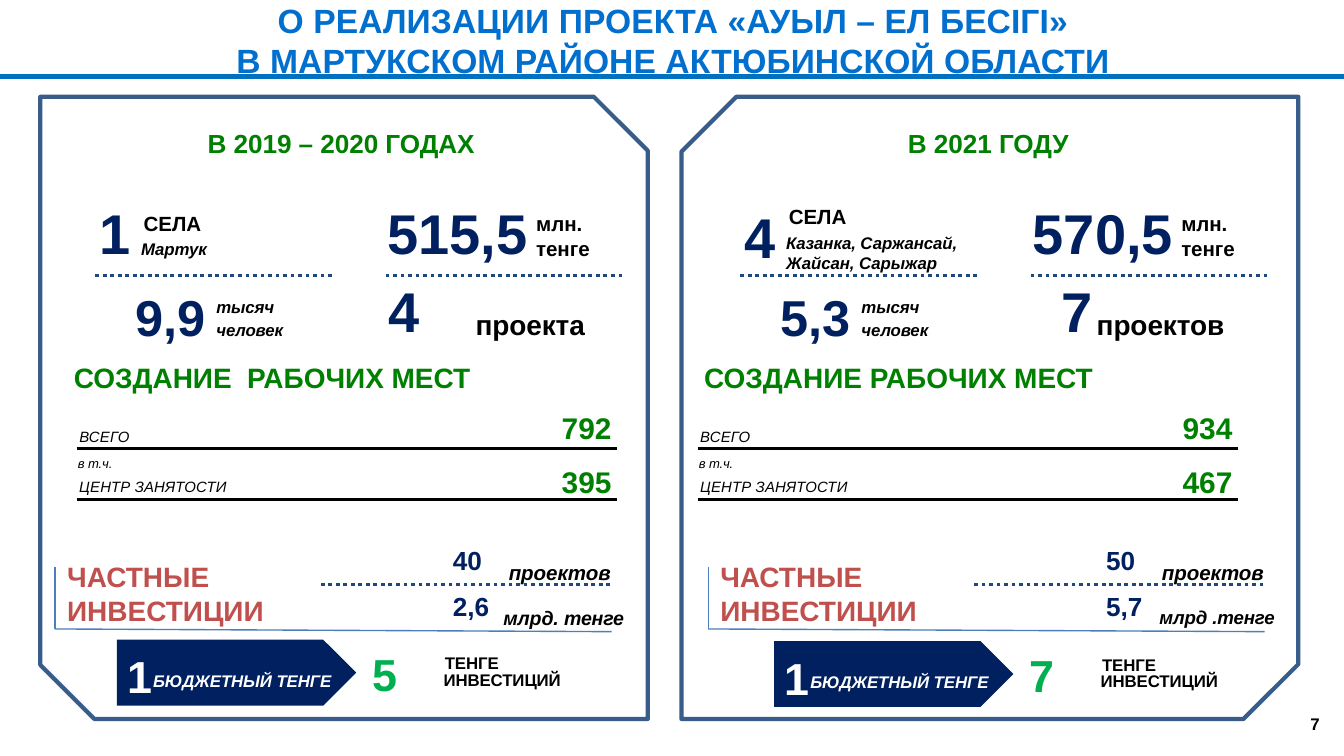
from lxml import etree
from pptx import Presentation
from pptx.dml.color import RGBColor
from pptx.enum import dml, shapes, text
from pptx.oxml.ns import qn
from pptx.util import Inches, Pt

NAVY, GREEN, BLACK, WHITE = "002060", "008000", "000000", "FFFFFF"
DOTS, EDGE, THIN, RED = "1F497D", "385D8A", "4B7EBC", "C0504D"
SHAPE = shapes.MSO_SHAPE


def color(code):
    return RGBColor.from_string(code)


def fill_text(frame, words, size=9, ink=BLACK, bold=True, italic=False,
              align="LEFT", wrap=True, pad=False, gap=-0.05, lead=None):
    """Write the lines of words into a text frame."""
    frame.word_wrap = wrap
    frame.auto_size = text.MSO_AUTO_SIZE.NONE
    frame.vertical_anchor = text.MSO_ANCHOR.TOP
    frame.margin_left = frame.margin_right = Inches(0.05 if pad else 0)
    frame.margin_top = Inches(0.02 if pad else 0.01)
    frame.margin_bottom = Inches(0.02 if pad else 0)
    for i, line in enumerate(words.split("\n")):
        para = frame.add_paragraph() if i else frame.paragraphs[0]
        para.alignment = getattr(text.PP_ALIGN, align)
        para._p.get_or_add_pPr().set("marL", str(Inches(0.01)))
        if lead:
            para.line_spacing = lead
        run = para.add_run()
        run.text = line
        font = run.font
        font.name, font.size = "Arial", Pt(size)
        font.bold, font.italic = bold, italic
        font.color.rgb = color(ink)
        run._r.get_or_add_rPr().set("spc", str(round(gap * 100)))


def label(slide, words, x, y, w, h, **style):
    box = slide.shapes.add_textbox(Inches(x), Inches(y), Inches(w), Inches(h))
    fill_text(box.text_frame, words, **style)


def tag(slide, words, x, y, w, h, **style):
    """A padded label that stays on its own lines."""
    label(slide, words, x, y, w, h, pad=True, wrap=False, **style)


def rule(slide, x1, y1, x2, y2, ink, width, dots=False):
    line = slide.shapes.add_connector(
        shapes.MSO_CONNECTOR.STRAIGHT,
        Inches(x1), Inches(y1), Inches(x2), Inches(y2))
    line.line.color.rgb = color(ink)
    line.line.width = Pt(width)
    if dots:
        line.line.dash_style = dml.MSO_LINE.ROUND_DOT
    etree.SubElement(line._element.spPr, qn("a:effectLst"))


def shape(slide, kind, x, y, w, h, fill=None, edge=None):
    item = slide.shapes.add_shape(
        kind, Inches(x), Inches(y), Inches(w), Inches(h))
    item.shadow.inherit = False
    if fill:
        item.fill.solid()
        item.fill.fore_color.rgb = color(fill)
    else:
        item.fill.background()
    if edge:
        item.line.color.rgb = color(edge)
        item.line.width = Pt(2.25)
    else:
        item.line.fill.background()
    return item


def frame(slide, x, y, w, h, turn=0):
    """Panel outline with two cut corners."""
    panel = shape(slide, SHAPE.SNIP_2_DIAG_RECTANGLE, x, y, w, h, edge=EDGE)
    panel.adjustments[0], panel.adjustments[1] = 0, 0.089
    panel.rotation = turn


def scope(slide, x, people, money):
    """Population and funding figures above and below dotted rules."""
    for left in (0.69, 2.85):
        rule(slide, x + left + 1.78, 2.05, x + left, 2.05, DOTS, 2, dots=True)
    label(slide, money, x + 2.74, 1.47, 1.32, 0.51,
          size=30, ink=NAVY, align="CENTER")
    label(slide, "млн. тенге", x + 3.98, 1.56, 0.66, 0.41, size=11)
    label(slide, people, x + 1, 2.12, 0.66, 0.46, size=27, ink=NAVY)
    label(slide, "тысяч человек", x + 1.55, 2.16, 0.8, 0.45,
          italic=True, pad=True, lead=Pt(12.6))


def villages(slide, x, y, count, names, w, h, top):
    label(slide, count, x, y, 0.37, 0.51, size=30, ink=NAVY)
    tag(slide, "СЕЛА", x + 0.28, top, 0.53, 0.25, size=11)
    tag(slide, names, x + 0.26, top + 0.21, w, h, italic=True)


def projects(slide, count, x, noun, left):
    label(slide, count, x, 2.05, 0.66, 0.51, size=30, ink=NAVY)
    label(slide, noun, left, 2.28, 1.32, 0.26, size=15, align="CENTER")


def jobs(slide, x, total, centre):
    """Two underlined rows of job counts."""
    small = dict(bold=False, italic=True)
    rows = (("ВСЕГО", total, 3.16, 3.04, 3.34, 0.49),
            ("ЦЕНТР ЗАНЯТОСТИ", centre, 3.53, 3.44, 3.72, 1.2))
    for name, count, top, high, base, w in rows:
        rule(slide, x, base, x + 4.02, base, BLACK, 1.65)
        tag(slide, name, x - 0.04, top, w, 0.18, size=8, gap=0.05, **small)
        label(slide, count, x + 3.6, high, 0.66, 0.28,
              size=16, ink=GREEN, gap=0)
    label(slide, "в т.ч.", x, 3.38, 0.48, 0.12, size=7,
          lead=Pt(8.2), **small)


def invest(slide, x, count, money, unit, size):
    """Private investment block."""
    rule(slide, x, 4.22, x, 4.68, THIN, 0.75)
    rule(slide, x, 4.68, x + 4.14, 4.7, THIN, 0.75)
    rule(slide, x + 4.13, 4.35, x + 1.97, 4.35, DOTS, 2, dots=True)
    label(slide, "ЧАСТНЫЕ\nИНВЕСТИЦИИ", x + 0.08, 4.15, 1.66, 0.52,
          size=15, ink=RED, gap=0, lead=1.01)
    for words, top in ((count, 4.04), (money, 4.38)):
        label(slide, words, x + 2.95, top, 0.51, 0.24,
              size=14, ink=NAVY, gap=0)
    label(slide, "проектов", x + 3.33, 4.16, 0.84, 0.19,
          size=11, italic=True, align="CENTER")
    label(slide, unit, x + 3.12, 4.5, 1.32, 0.18,
          size=size, italic=True, align="CENTER")


def budget(slide, x, y, yielded):
    """Arrow from one budget tenge to the investment it brings."""
    shape(slide, SHAPE.PENTAGON, x, y, 1.78, 0.49, fill=NAVY)
    label(slide, "1", x + 0.07, y + 0.06, 0.23, 0.41, size=24, ink=WHITE)
    label(slide, "БЮДЖЕТНЫЙ ТЕНГЕ", x + 0.26, y + 0.22, 1.36, 0.16,
          ink=WHITE, italic=True)
    label(slide, yielded, x + 1.89, y + 0.04, 0.66, 0.41,
          size=24, ink="00B050")
    label(slide, "ТЕНГЕ", x + 2.43, y + 0.09, 0.95, 0.16)
    tag(slide, "ИНВЕСТИЦИЙ", x + 2.37, y + 0.2, 1.02, 0.2)


def heads(slide, period, x, w, goal, left):
    label(slide, period, x, 0.94, w, 0.24,
          size=14, ink=GREEN, align="CENTER")
    label(slide, goal, left, 2.67, 3.36, 0.26,
          size=15, ink=GREEN, gap=0, lead=1.01)


def main():
    deck = Presentation()
    deck.slide_width, deck.slide_height = Inches(10), Inches(10) * 9 // 16
    slide = deck.slides.add_slide(deck.slide_layouts[5])

    # Title and its rule
    title = slide.shapes.title
    title.left, title.top = Inches(0.09), Inches(-0.02)
    title.width, title.height = Inches(9.83), Inches(0.65)
    fill_text(title.text_frame,
              "О РЕАЛИЗАЦИИ ПРОЕКТА «АУЫЛ – ЕЛ БЕСІГІ»\n"
              "В МАРТУКСКОМ РАЙОНЕ АКТЮБИНСКОЙ ОБЛАСТИ",
              size=18, ink="006FCE", align="CENTER", pad=True, gap=0.05)
    rule(slide, 0, 0.57, 10, 0.57, "0070C0", 2.25)

    # Left panel: 2019–2020
    frame(slide, 0.3, 0.72, 4.52, 4.63)
    heads(slide, "В 2019 – 2020 ГОДАХ ", 0.3, 4.52,
          "СОЗДАНИЕ  РАБОЧИХ МЕСТ", 0.54)
    scope(slide, 0, "9,9", "515,5")
    villages(slide, 0.73, 1.47, "1", "Мартук", 0.59, 0.2, 1.55)
    projects(slide, "4", 2.88, "проекта", 3.28)
    jobs(slide, 0.57, "792", "395")
    invest(slide, 0.41, "40", "2,6", "млрд. тенге", 10.5)
    budget(slide, 0.87, 4.76, "5")

    # Right panel: 2021
    frame(slide, 5.05, 0.74, 4.63, 4.59, turn=270)
    heads(slide, "В 2021 ГОДУ ", 5.08, 4.59,
          "СОЗДАНИЕ РАБОЧИХ МЕСТ", 5.23)
    scope(slide, 4.8, "5,3", "570,5")
    villages(slide, 5.53, 1.5, "4", "Казанка, Саржансай,\nЖайсан, Сарыжар",
             1.41, 0.35, 1.5)
    projects(slide, "7", 7.89, "проектов", 7.97)
    jobs(slide, 5.19, "934", "467")
    invest(slide, 5.27, "50", "5,7", "млрд .тенге", 10)
    budget(slide, 5.76, 4.77, "7")

    # Page number
    label(slide, "7", 9.74, 5.3, 0.17, 0.2, gap=0)
    deck.save("out.pptx")


if __name__ == "__main__":
    main()
